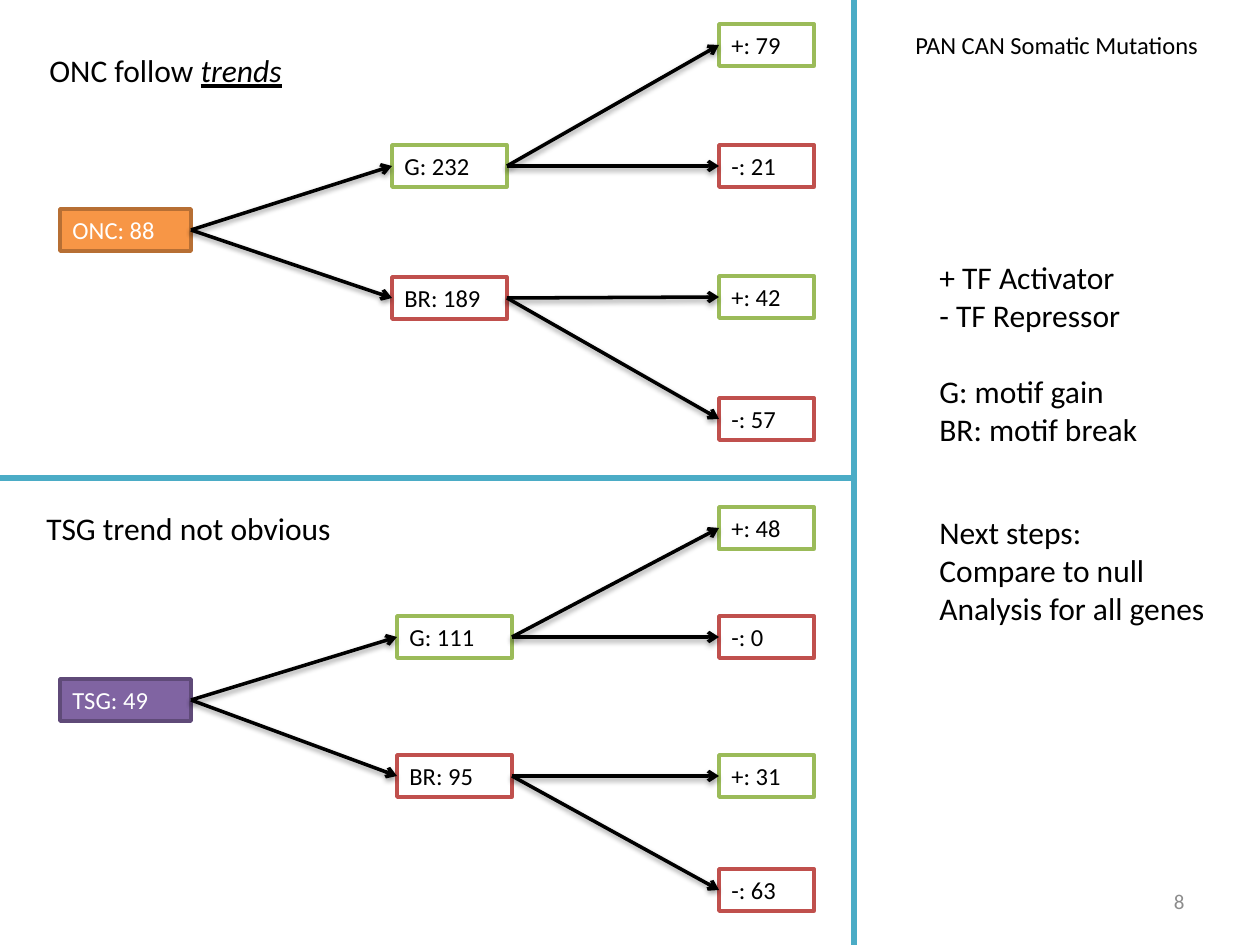
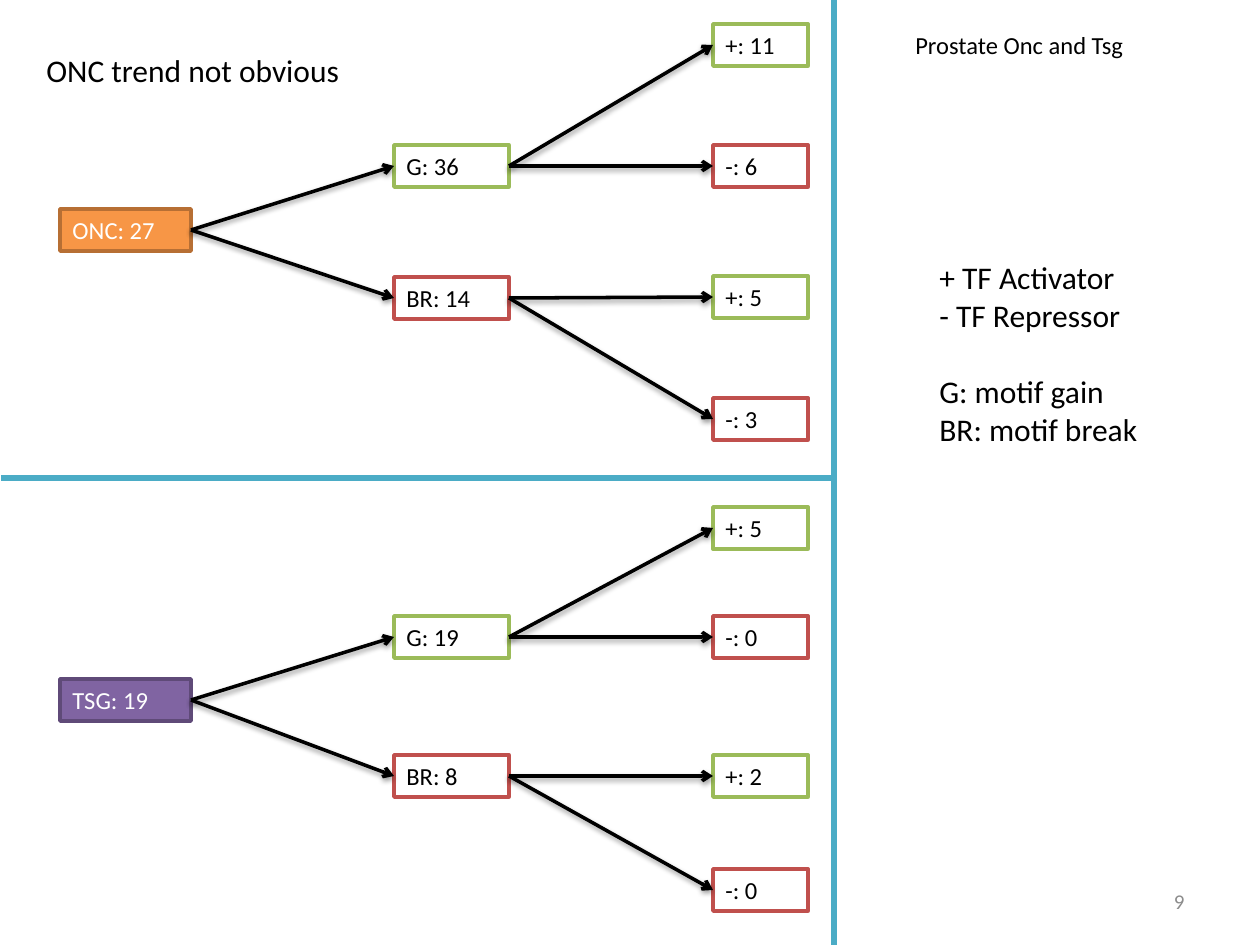
"""Build two slides of mutation trees for oncogenes and tumour suppressors."""
from lxml.etree import SubElement
from pptx import Presentation
from pptx.dml.color import RGBColor
from pptx.enum.shapes import MSO_CONNECTOR, MSO_SHAPE
from pptx.enum.text import MSO_ANCHOR, PP_ALIGN
from pptx.oxml.ns import qn
from pptx.util import Emu, Pt

EMU_PER_PX = 914400 / 126
FONT = "Calibri"
BLACK = RGBColor(0x00, 0x00, 0x00)
WHITE = RGBColor(0xFF, 0xFF, 0xFF)
GREY = RGBColor(0x8C, 0x8C, 0x8C)
ORANGE = RGBColor(0xF7, 0x96, 0x46)
DARK_ORANGE = RGBColor(0xB7, 0x6F, 0x34)
PURPLE = RGBColor(0x80, 0x64, 0xA2)
DARK_PURPLE = RGBColor(0x5F, 0x4A, 0x78)
GREEN = RGBColor(0x9B, 0xBB, 0x59)
RED = RGBColor(0xC0, 0x50, 0x4D)
TEAL = RGBColor(0x4B, 0xAC, 0xC6)

SLIDE_WIDTH, SLIDE_HEIGHT = 1260, 945
BOX_HEIGHT = 42
ROOT_LEFT, ROOT_WIDTH = 60, 131
BRANCH_WIDTH, LEAF_WIDTH = 115, 95
DIVIDER_TOP = 478
LEGEND = ["+ TF Activator", "- TF Repressor", "G: motif gain", "BR: motif break"]
NEXT_STEPS = ["Next steps:", "Compare to null", "Analysis for all genes"]

TREE_STYLES = [
    ("ONC", ORANGE, DARK_ORANGE, 209, [145, 277], [24, 145, 276, 398]),
    ("TSG", PURPLE, DARK_PURPLE, 679, [616, 755], [507, 616, 755, 869]),
]
SLIDES = [
    {
        "heading": "PAN CAN Somatic Mutations",
        "number": "8",
        "leaf_left": 719,
        "divider": (0, 854),
        "trees": [
            (392, 88, [232, 189], [79, 21, 42, 57]),
            (397, 49, [111, 95], [48, 0, 31, 63]),
        ],
        "texts": [
            ((37, 45, 261, 50), ["ONC follow "], "trends"),
            ((34, 503, 314, 50), ["TSG trend not obvious"], ""),
            ((927, 507, 295, 127), NEXT_STEPS, ""),
        ],
    },
    {
        "heading": "Prostate Onc and Tsg",
        "number": "9",
        "leaf_left": 713,
        "divider": (1, 834),
        "trees": [
            (394, 27, [36, 14], [11, 6, 5, 3]),
            (394, 19, [19, 8], [5, 0, 2, 0]),
        ],
        "texts": [((34, 45, 323, 50), ["ONC trend not obvious"], "")],
    },
]


def add_text(slide, box, lines, size=18, color=BLACK, fill=None, outline=None, wrap=False):
    """Add a text box, or a rectangle when a fill is given."""
    place = [Emu(round(value * EMU_PER_PX)) for value in box]
    if fill is None:
        shape = slide.shapes.add_textbox(*place)
    else:
        shape = slide.shapes.add_shape(MSO_SHAPE.RECTANGLE, *place)
        shape.shadow.inherit = False
        shape.fill.solid()
        shape.fill.fore_color.rgb = fill
        shape.line.color.rgb = outline
        shape.line.width = Pt(2)
    frame = shape.text_frame
    frame.text = "\n".join(lines)
    frame.word_wrap = wrap
    frame.vertical_anchor = MSO_ANCHOR.TOP
    for paragraph in frame.paragraphs:
        paragraph.alignment = PP_ALIGN.LEFT
        paragraph.font.size = Pt(size)
        for run in paragraph.runs:
            run.font.name = FONT
            run.font.size = Pt(size)
            run.font.color.rgb = color
    return shape


def add_line(slide, ends, color, width, arrow=False):
    """Add a straight line, with an arrowhead and soft shadow if asked."""
    place = [Emu(round(value * EMU_PER_PX)) for value in ends]
    line = slide.shapes.add_connector(MSO_CONNECTOR.STRAIGHT, *place)
    line.line.color.rgb = color
    line.line.width = Pt(width)
    properties = line.element.spPr
    effects = SubElement(properties, qn("a:effectLst"))
    if arrow:
        SubElement(properties.find(qn("a:ln")), qn("a:tailEnd"), type="arrow")
        shadow = SubElement(effects, qn("a:outerShdw"), blurRad="40000",
                            dist="20000", dir="5400000", rotWithShape="0")
        shadow_color = SubElement(shadow, qn("a:srgbClr"), val="000000")
        SubElement(shadow_color, qn("a:alpha"), val="38000")
    return line


presentation = Presentation()
presentation.slide_width = Emu(round(SLIDE_WIDTH * EMU_PER_PX))
presentation.slide_height = Emu(round(SLIDE_HEIGHT * EMU_PER_PX))

for content in SLIDES:
    slide = presentation.slides.add_slide(presentation.slide_layouts[6])
    links = []
    for style, tree in zip(TREE_STYLES, content["trees"]):
        name, fill, outline, root_top, branch_tops, leaf_tops = style
        branch_left, root_count, branch_counts, leaf_counts = tree
        root = add_text(slide, (ROOT_LEFT, root_top, ROOT_WIDTH, BOX_HEIGHT),
                        [f"{name}: {root_count}"], 14, WHITE, fill, outline, True)
        branches = []
        for label, color, top, count in zip(("G", "BR"), (GREEN, RED), branch_tops, branch_counts):
            branch = add_text(slide, (branch_left, top, BRANCH_WIDTH, BOX_HEIGHT),
                              [f"{label}: {count}"], 14, BLACK, WHITE, color, True)
            branches.append(branch)
            links.append((root, branch))
        for index, (top, count) in enumerate(zip(leaf_tops, leaf_counts)):
            sign, color = (("+", GREEN), ("-", RED))[index % 2]
            leaf = add_text(slide, (content["leaf_left"], top, LEAF_WIDTH, BOX_HEIGHT),
                            [f"{sign}: {count}"], 14, BLACK, WHITE, color, True)
            links.append((branches[index // 2], leaf))

    for source, target in links:
        arrow = add_line(slide, (0, 0, 0, 0), BLACK, 2, True)
        arrow.begin_connect(source, 3)
        arrow.end_connect(target, 1)

    start, divider_left = content["divider"]
    add_line(slide, (start, DIVIDER_TOP, divider_left, DIVIDER_TOP), TEAL, 3)
    add_line(slide, (divider_left, SLIDE_HEIGHT, divider_left, 0), TEAL, 3)

    add_text(slide, (903, 24, 318, 72), [content["heading"]], 14, wrap=True)
    legend = add_text(slide, (927, 252, 226, 204), LEGEND)
    legend.text_frame.paragraphs[2].space_before = Pt(22)

    for box, lines, emphasis in content["texts"]:
        note = add_text(slide, box, lines)
        if emphasis:
            run = note.text_frame.paragraphs[0].add_run()
            run.text = emphasis
            run.font.name = FONT
            run.font.size = Pt(18)
            run.font.color.rgb = BLACK
            run.font.italic = True
            run.font.underline = True

    number = add_text(slide, (903, 876, 294, 50), [content["number"]], 12, GREY, wrap=True)
    number.text_frame.vertical_anchor = MSO_ANCHOR.MIDDLE
    number.text_frame.paragraphs[0].alignment = PP_ALIGN.RIGHT

presentation.save("out.pptx")
